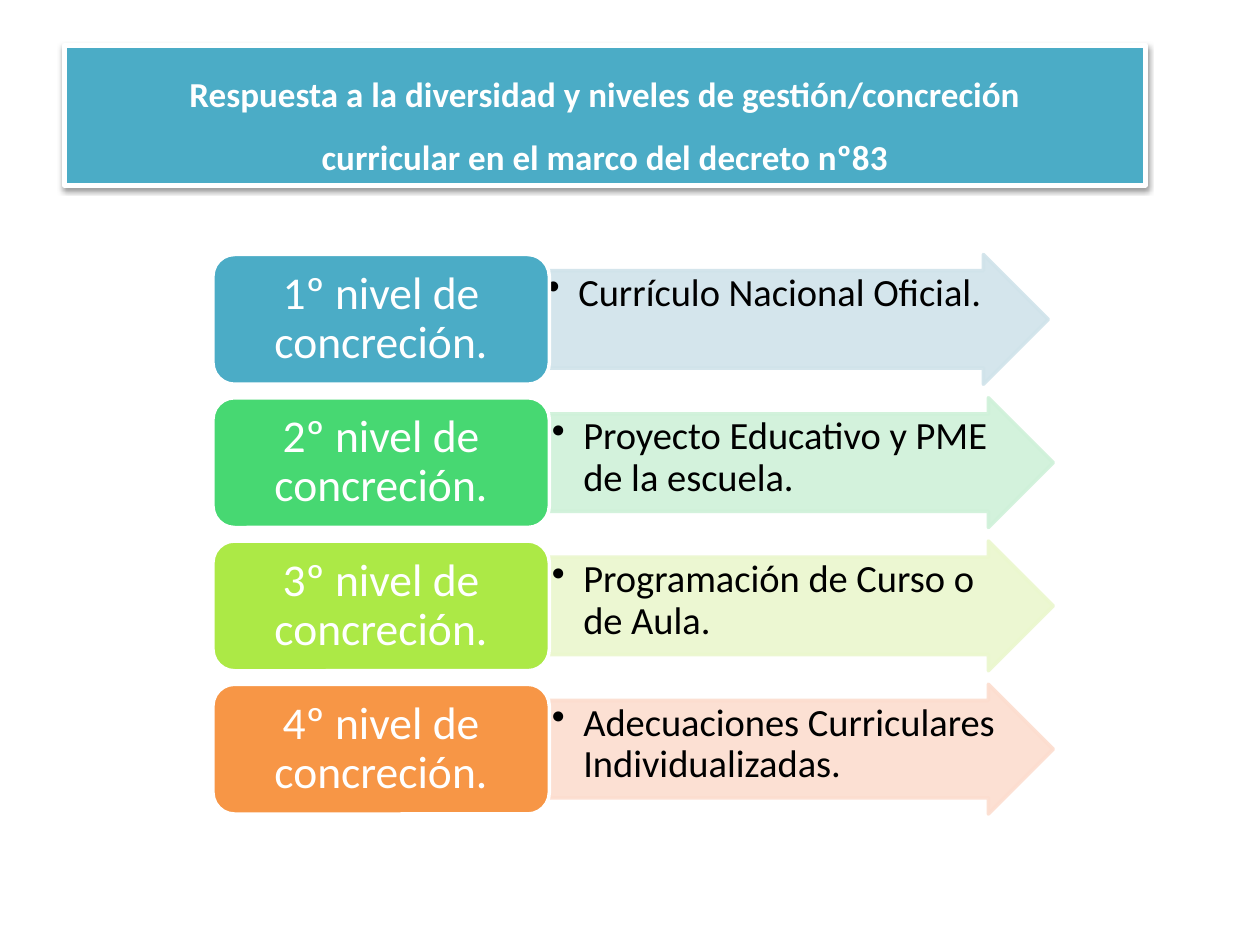
"""Builds a slide of the four curriculum levels, each a label and an arrow."""
from lxml.etree import SubElement as Sub
from pptx import Presentation
from pptx.dml.color import RGBColor as Rgb
from pptx.enum.shapes import MSO_SHAPE as Kind
from pptx.enum.text import MSO_ANCHOR as Anchor, MSO_AUTO_SIZE as Fit, PP_ALIGN as Align
from pptx.oxml.ns import qn
from pptx.util import Inches, Pt

HEX = {"teal": "4BACC6", "green": "47D872", "lime": "ACE946", "orange": "F79646",
       "pale teal": "D0E3EA", "pale green": "CFF1D9", "pale lime": "EBF7CE",
       "pale orange": "FCDDCF", "white": "FFFFFF", "black": "000000"}


def write(shape, lines, size, color="white", bold=False, space=0.9, align=Align.CENTER,
          anchor=Anchor.MIDDLE, pad=(0.11, 0.05), bullet=False):
    frame = shape.text_frame
    frame.word_wrap, frame.auto_size, frame.vertical_anchor = True, Fit.NONE, anchor
    frame.margin_left = frame.margin_right = Inches(pad[0])
    frame.margin_top = frame.margin_bottom = Inches(pad[1])
    frame.text = "\n".join(lines)
    for para in frame.paragraphs:
        para.alignment, para.line_spacing = align, space
        if bullet:
            para.level = 1
            props = para._p.get_or_add_pPr()
            props.set("marL", str(Inches(0.25)))
            props.set("indent", str(-Inches(0.25)))
            Sub(props, qn("a:buChar"), char="•")
        font = para.runs[0].font
        font.name, font.size, font.bold = "Calibri", Pt(size), bold
        font.color.rgb = Rgb.from_string(HEX[color])


def paint(shape, fill, line, width, alpha=None):
    shape.fill.solid()
    shape.fill.fore_color.rgb = Rgb.from_string(HEX[fill])
    shape.line.color.rgb = Rgb.from_string(HEX[line])
    shape.line.width = Pt(width)
    if alpha:
        for tone in shape._element.spPr.iter(qn("a:srgbClr")):
            Sub(tone, qn("a:alpha"), val=str(alpha * 1000))


deck = Presentation()
deck.slide_width, deck.slide_height = Inches(10), Inches(7.5)
slide = deck.slides.add_slide(deck.slide_layouts[5])

title = slide.shapes.title
title.left, title.top = Inches(0.51), Inches(0.36)
title.width, title.height = Inches(8.58), Inches(1.11)
paint(title, "teal", "white", 3)
write(title, ["Respuesta a la diversidad y niveles de gestión/concreción",
              "curricular en el marco del decreto nº83"],
      20, bold=True, space=1.5, anchor=Anchor.TOP, pad=(0.1, 0.05))
glow = Sub(Sub(title._element.spPr, qn("a:effectLst")), qn("a:outerShdw"),
           blurRad=str(Pt(3.1)), dist=str(Pt(1.6)), dir="5400000", rotWithShape="0")
Sub(Sub(glow, qn("a:srgbClr"), val=HEX["black"]), qn("a:alpha"), val="38000")

levels = [("teal", 4.32, "Currículo Nacional Oficial."),
          ("green", 4.36, "Proyecto Educativo y PME de la escuela."),
          ("lime", 4.36, "Programación de Curso o de Aula."),
          ("orange", 4.36, "Adecuaciones Curriculares Individualizadas.")]
for row, (tone, left, text) in enumerate(levels):
    top, high = Inches(2.02 + row * 1.137), Inches(1.03)
    arrow = slide.shapes.add_shape(Kind.RIGHT_ARROW, Inches(left), top, Inches(4), high)
    arrow.adjustments[0] = 0.75
    arrow.shadow.inherit = False
    paint(arrow, f"pale {tone}", f"pale {tone}", 2, alpha=90)
    write(arrow, [text], 22, color="black", align=Align.LEFT, anchor=Anchor.TOP,
          pad=(0.02, 0.02), bullet=True)
    label = slide.shapes.add_shape(Kind.ROUNDED_RECTANGLE, Inches(1.69), top, Inches(2.67), high)
    label.shadow.inherit = False
    paint(label, tone, "white", 2)
    write(label, [f"{row + 1}º nivel de concreción."], 26)

deck.save("out.pptx")
